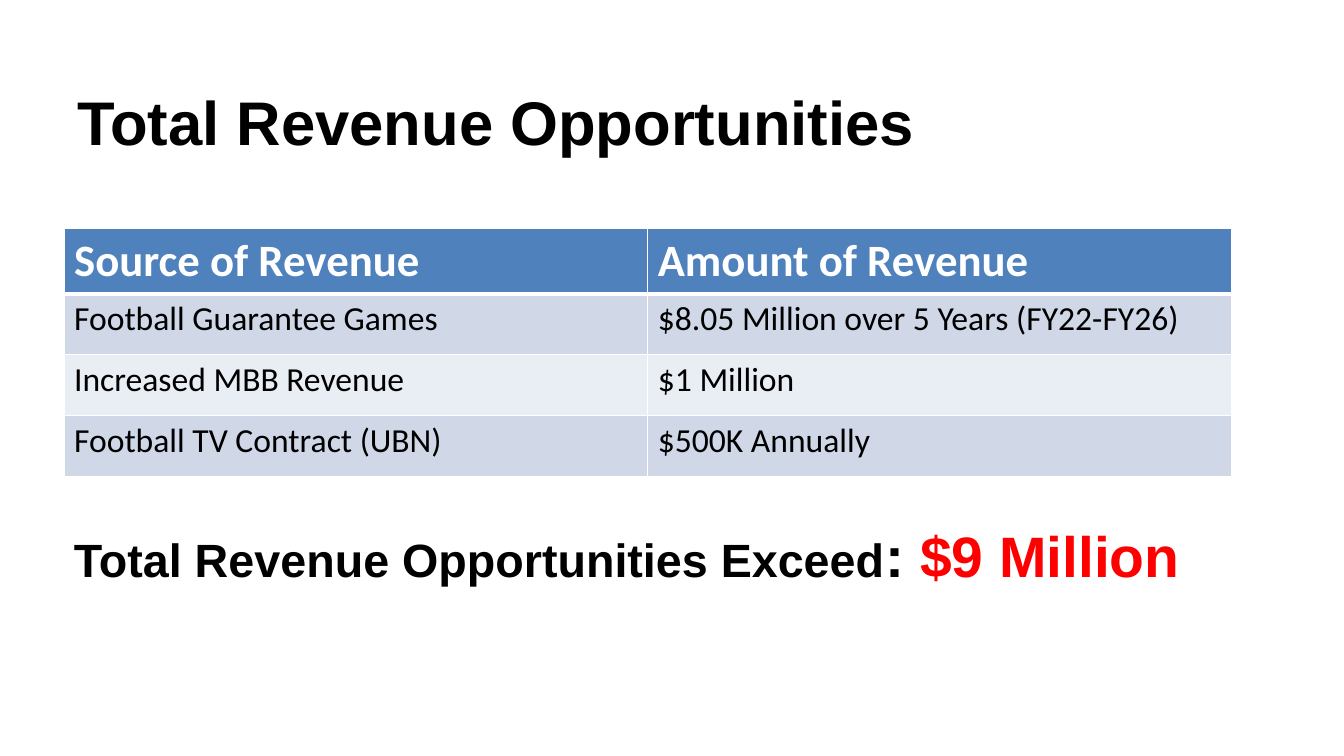
from lxml.etree import SubElement
from pptx import Presentation
from pptx.dml.color import RGBColor
from pptx.enum.text import MSO_ANCHOR, MSO_AUTO_SIZE, PP_ALIGN
from pptx.oxml.ns import qn
from pptx.util import Emu, Pt

BLACK = RGBColor(0x00, 0x00, 0x00)
WHITE = RGBColor(0xFF, 0xFF, 0xFF)
RED = RGBColor(0xFF, 0x00, 0x00)
HEADER_BLUE = RGBColor(0x4F, 0x81, 0xBD)
BAND_DARK = RGBColor(0xD0, 0xD8, 0xE8)
BAND_LIGHT = RGBColor(0xE9, 0xED, 0xF4)

HEADER_HEIGHT, ROW_HEIGHT, COLUMN_WIDTH = 61, 58, 556
REVENUE_ROWS = [
    ("Source of Revenue", "Amount of Revenue"),
    ("Football Guarantee Games", "$8.05 Million over 5 Years (FY22-FY26)"),
    ("Increased MBB Revenue", "$1 Million"),
    ("Football TV Contract (UBN)", "$500K Annually"),
]


def px(count):
    """Turn pixels, 96 to the inch, into EMU."""
    return Emu(count * 9525)


def add_border(cell, side, points):
    line = SubElement(cell._tc.get_or_add_tcPr(), qn(f"a:ln{side}"), w=str(Pt(points)))
    fill = SubElement(line, qn("a:solidFill"))
    SubElement(fill, qn("a:srgbClr"), val=str(WHITE))


deck = Presentation()
deck.slide_width, deck.slide_height = px(1280), px(720)
slide = deck.slides.add_slide(deck.slide_layouts[5])

# Title
title = slide.shapes.title
title.left, title.top, title.width, title.height = px(64), px(55), px(1152), px(120)
frame = title.text_frame
frame.text = "Total Revenue Opportunities"
frame.vertical_anchor = MSO_ANCHOR.MIDDLE
frame.auto_size = MSO_AUTO_SIZE.NONE
para = frame.paragraphs[0]
para.alignment = PP_ALIGN.LEFT
para.font.name, para.font.size, para.font.bold = "Arial", Pt(44), True
para.font.color.rgb = BLACK

# Revenue table
table = slide.shapes.add_table(
    len(REVENUE_ROWS), 2, px(61), px(218), px(2 * COLUMN_WIDTH),
    px(HEADER_HEIGHT + 3 * ROW_HEIGHT),
).table
for column in table.columns:
    column.width = px(COLUMN_WIDTH)
for row_index, texts in enumerate(REVENUE_ROWS):
    is_header = row_index == 0
    table.rows[row_index].height = px(HEADER_HEIGHT if is_header else ROW_HEIGHT)
    band = BAND_DARK if row_index % 2 else BAND_LIGHT
    for column_index, text in enumerate(texts):
        cell = table.cell(row_index, column_index)
        cell.text = text
        add_border(cell, "L", 1)
        add_border(cell, "R", 1)
        add_border(cell, "T", 3 if row_index == 1 else 1)
        add_border(cell, "B", 3 if is_header else 1)
        cell.fill.solid()
        cell.fill.fore_color.rgb = HEADER_BLUE if is_header else band
        font = cell.text_frame.paragraphs[0].font
        font.name, font.bold = "Calibri", is_header
        font.size = Pt(32 if is_header else 24)
        font.color.rgb = WHITE if is_header else BLACK

# Total line
box = slide.shapes.add_textbox(px(61), px(468), px(1152), px(120))
frame = box.text_frame
frame.word_wrap = True
frame.vertical_anchor = MSO_ANCHOR.MIDDLE
para = frame.paragraphs[0]
para.font.name, para.font.bold = "Arial", True
for text, size, color in [
    ("Total Revenue Opportunities Exceed", 33.3, BLACK),
    (": ", 40.7, BLACK),
    ("$9 Million", 40.7, RED),
]:
    span = para.add_run()
    span.text = text
    span.font.size = Pt(size)
    span.font.color.rgb = color

deck.save("out.pptx")
